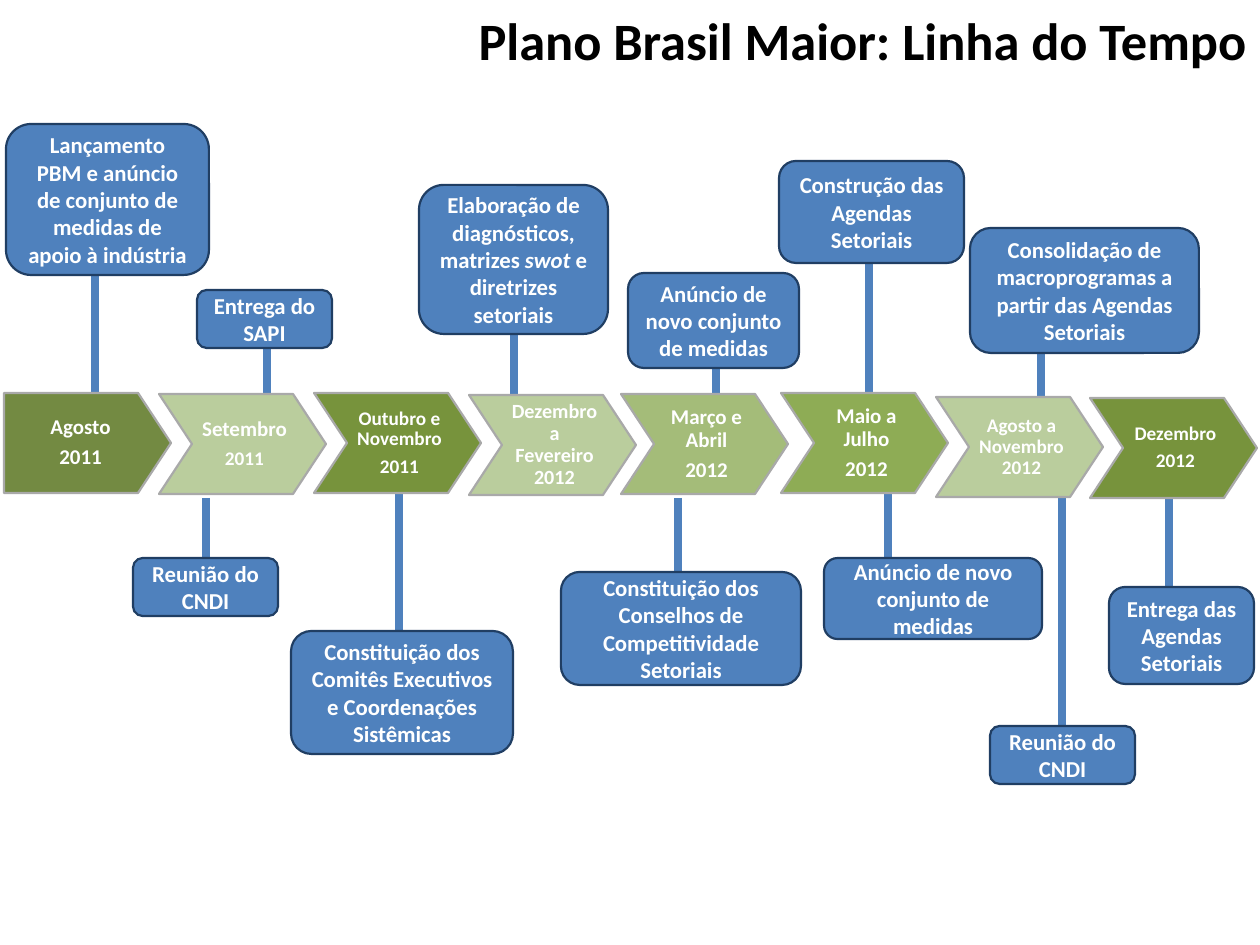
"""Build the Plano Brasil Maior timeline slide."""
from lxml import etree
from pptx import Presentation
from pptx import util as u
from pptx.dml.color import RGBColor
from pptx.enum import shapes, text
from pptx.oxml.ns import qn

PX = u.Inches(1) / 126
WHITE = RGBColor(0xFF, 0xFF, 0xFF)
BLACK = RGBColor(0, 0, 0)
BLUE = RGBColor(0x4F, 0x81, 0xBD)
NAVY = RGBColor(0x20, 0x3E, 0x63)
GRAY = RGBColor(0xA9, 0xA9, 0xA9)
MOSS = RGBColor(0x73, 0x8A, 0x42)
OLIVE = RGBColor(0x77, 0x93, 0x3C)
PALE = RGBColor(0xBA, 0xCD, 0x9D)
SAGE = RGBColor(0xA4, 0xBC, 0x79)
LEAF = RGBColor(0x8E, 0xAC, 0x55)

TITLE = "Plano Brasil Maior: Linha do Tempo"

# left, top, fill, (paragraph, size) pairs
PERIODS = [
    (4, 393, MOSS, [("Agosto", 12), ("2011", 12)]),
    (159, 394, PALE, [("Setembro", 12), ("2011", 11)]),
    (314, 393, OLIVE, [("Outubro e Novembro", 11), ("2011", 11)]),
    (469, 395, PALE, [("Dezembro a Fevereiro 2012", 11.5)]),
    (621, 394, SAGE, [("Março e Abril", 12), ("2012", 12)]),
    (781, 393, LEAF, [("Maio a Julho", 12), ("2012", 12)]),
    (936, 397, PALE, [("Agosto a Novembro 2012", 11)]),
    (1090, 398, OLIVE, [("Dezembro", 11), ("2012", 11)]),
]
MILESTONES = [
    ("Lançamento PBM e anúncio de conjunto de medidas de apoio à indústria",
     (6, 124, 203, 151), (95, 227, 393)),
    ("Constituição dos Comitês Executivos e Coordenações Sistêmicas",
     (291, 631, 222, 123), (399, 493, 639)),
    ("Elaboração de diagnósticos, matrizes *swot* e diretrizes setoriais",
     (419, 185, 189, 149), (514, 309, 394)),
    ("Constituição dos Conselhos de Competitividade Setoriais",
     (561, 572, 240, 113), (678, 498, 616)),
    ("Construção das Agendas Setoriais",
     (779, 161, 185, 102), (869, 263, 393)),
    ("Consolidação de macroprogramas a partir das Agendas Setoriais",
     (970, 228, 229, 125), (1041, 309, 427)),
    ("Anúncio de novo conjunto de medidas",
     (824, 558, 218, 81), (888, 479, 572)),
    ("Reunião do CNDI", (133, 558, 145, 58), (206, 498, 587)),
    ("Entrega do SAPI", (197, 290, 135, 58), (267, 290, 393)),
    ("Reunião do CNDI", (990, 726, 145, 58), (1062, 498, 726)),
    ("Anúncio de novo conjunto de medidas",
     (628, 273, 171, 95), (716, 347, 396)),
    ("Entrega das Agendas Setoriais",
     (1109, 587, 145, 97), (1169, 483, 587)),
]
ARROW_W, ARROW_H, ARROW_TIP = 167, 100, 33
FIRST_INSETS, INSETS = (6, 3, 20, 3), (42, 3, 38, 3)
SIDES = ("left", "top", "right", "bottom")
LABEL = {"name": "Calibri", "bold": True}
MIDDLE = {"vertical_anchor": text.MSO_ANCHOR.MIDDLE, "word_wrap": True}


def emu(*lengths):
    return [u.Emu(round(length * PX)) for length in lengths]


def apply(target, values):
    for key, value in values.items():
        setattr(target, key, value)


def write(paragraph, content, size, color, **layout):
    apply(paragraph, {"alignment": text.PP_ALIGN.CENTER, **layout})
    for index, part in enumerate(content.split("*")):
        run = paragraph.add_run()
        run.text = part
        apply(run.font, {**LABEL, "size": u.Pt(size), "italic": index % 2 == 1})
        run.font.color.rgb = color


def paint(shape, fill, outline):
    shape.shadow.inherit = False
    shape.fill.solid()
    shape.fill.fore_color.rgb = fill
    shape.line.color.rgb = outline
    shape.line.width = u.Pt(1.25)
    apply(shape.text_frame, MIDDLE)


def add_stem(slide, x, start, end):
    stem = slide.shapes.add_connector(
        shapes.MSO_CONNECTOR.STRAIGHT, *emu(x, start, x, end))
    stem.line.color.rgb = BLUE
    stem.line.width = u.Pt(4.5)
    etree.SubElement(stem._element.spPr, qn("a:effectLst"))


def add_period(slide, left, top, fill, lines, first):
    right, middle, bottom = left + ARROW_W, top + ARROW_H / 2, top + ARROW_H
    shoulder = right - ARROW_TIP
    points = [(shoulder, top), (right, middle), (shoulder, bottom), (left, bottom)]
    if not first:
        points.append((left + ARROW_TIP, middle))
    outline = slide.shapes.build_freeform(left, top, scale=PX)
    outline.add_line_segments(points, close=True)
    arrow = outline.convert_to_shape()
    paint(arrow, fill, GRAY)
    frame = arrow.text_frame
    insets = emu(*(FIRST_INSETS if first else INSETS))
    apply(frame, {f"margin_{side}": inset for side, inset in zip(SIDES, insets)})
    for index, (content, size) in enumerate(lines):
        paragraph = frame.add_paragraph() if index else frame.paragraphs[0]
        gap = 0.35 * size if index < len(lines) - 1 else 0
        write(paragraph, content, size, WHITE,
              line_spacing=0.9, space_after=u.Pt(gap))


def add_milestone(slide, content, box):
    milestone = slide.shapes.add_shape(
        shapes.MSO_SHAPE.ROUNDED_RECTANGLE, *emu(*box))
    paint(milestone, BLUE, NAVY)
    write(milestone.text_frame.paragraphs[0], content, 13, WHITE)


def add_title(slide):
    title = slide.shapes.title
    apply(title, dict(zip(("left", "top", "width", "height"),
                          emu(-23, 9, 1283, 106))))
    apply(title.text_frame, {"vertical_anchor": text.MSO_ANCHOR.TOP,
                             "word_wrap": True,
                             "auto_size": text.MSO_AUTO_SIZE.NONE})
    write(title.text_frame.paragraphs[0], TITLE, 30, BLACK,
          alignment=text.PP_ALIGN.RIGHT, line_spacing=0.9, space_before=u.Pt(0))


def main():
    deck = Presentation()
    apply(deck, {"slide_width": u.Inches(10), "slide_height": u.Inches(7.5)})
    slide = deck.slides.add_slide(deck.slide_layouts[5])
    add_title(slide)
    for _, _, stem in MILESTONES:
        add_stem(slide, *stem)
    for index, period in enumerate(PERIODS):
        add_period(slide, *period, first=index == 0)
    for content, box, _ in MILESTONES:
        add_milestone(slide, content, box)
    deck.save("out.pptx")


if __name__ == "__main__":
    main()
